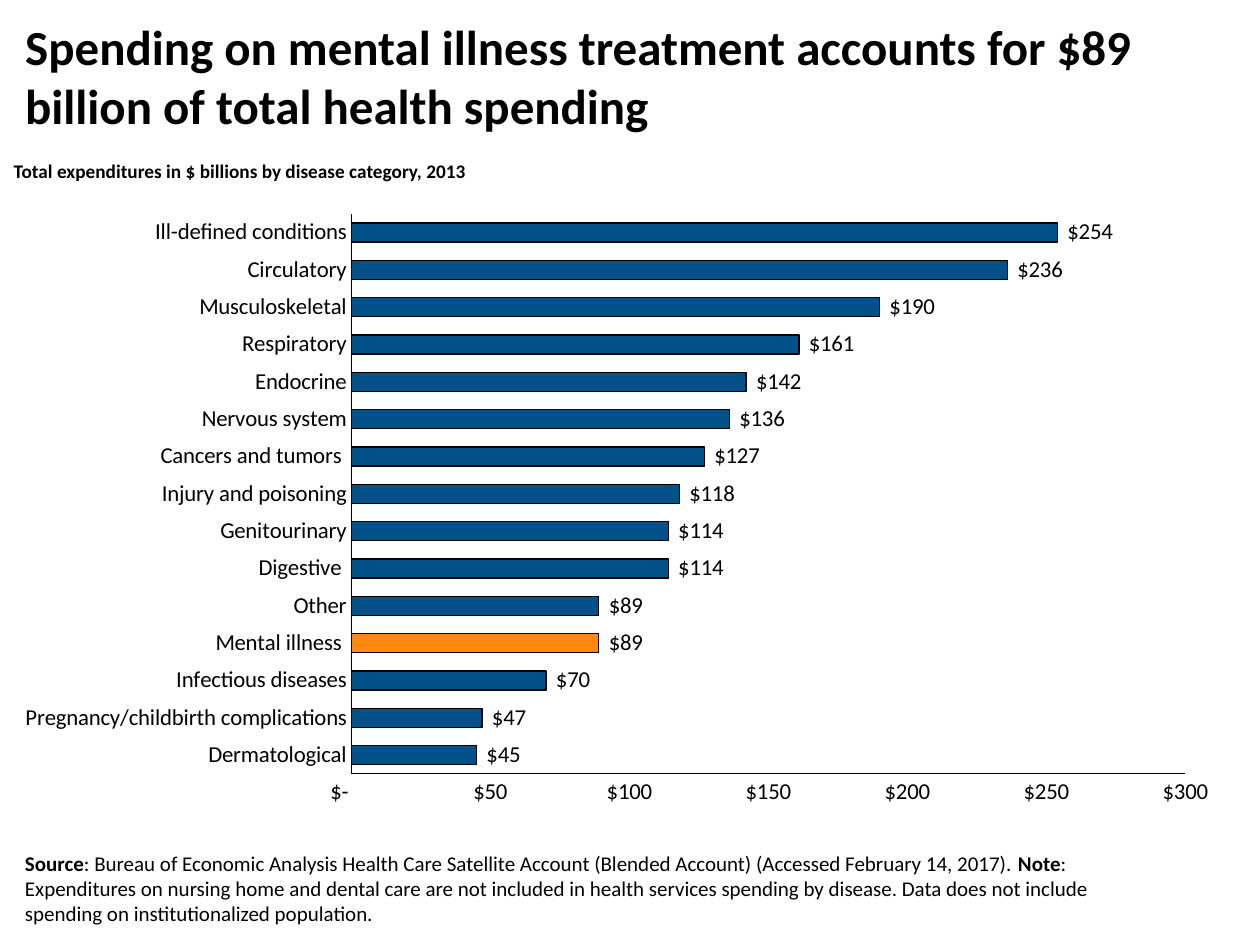
from lxml import etree
from pptx import Presentation
from pptx.chart.data import CategoryChartData
from pptx.dml.color import RGBColor
from pptx.enum.chart import XL_CHART_TYPE, XL_LABEL_POSITION, XL_TICK_MARK
from pptx.enum.text import MSO_ANCHOR, MSO_AUTO_SIZE, PP_ALIGN
from pptx.oxml.ns import qn
from pptx.util import Inches, Pt

BAR = XL_CHART_TYPE.BAR_CLUSTERED
OUTSIDE_END = XL_LABEL_POSITION.OUTSIDE_END
NO_TICK = XL_TICK_MARK.NONE
MIDDLE, BOTTOM = MSO_ANCHOR.MIDDLE, MSO_ANCHOR.BOTTOM
LEFT = PP_ALIGN.LEFT
FIT_SHAPE = MSO_AUTO_SIZE.SHAPE_TO_FIT_TEXT

FONT = "Calibri"
BLACK, BLUE, ORANGE = "000000", "025189", "FF8811"
DOLLARS = r'_("$"* #,##0_);_("$"* \(#,##0\);_("$"* "-"??_);_(@_)'
HIGHLIGHT = "Mental illness "
SPENDING = [
    ("Dermatological", 45),
    ("Pregnancy/childbirth complications", 47),
    ("Infectious diseases", 70),
    (HIGHLIGHT, 89),
    ("Other", 89),
    ("Digestive ", 114),
    ("Genitourinary", 114),
    ("Injury and poisoning", 118),
    ("Cancers and tumors ", 127),
    ("Nervous system", 136),
    ("Endocrine", 142),
    ("Respiratory", 161),
    ("Musculoskeletal", 190),
    ("Circulatory", 236),
    ("Ill-defined conditions", 254),
]


def rgb(color):
    return RGBColor.from_string(color)


def box(left, top, width, height):
    return [Inches(v) for v in (left, top, width, height)]


def set_font(font, size, bold=False):
    font.name, font.size, font.bold = FONT, Pt(size), bold
    font.color.rgb = rgb(BLACK)


def write(tf, runs, size, anchor, wrap=True):
    """Fill a text frame with one paragraph of (text, bold) runs."""
    tf.word_wrap = wrap
    tf.vertical_anchor = anchor
    p = tf.paragraphs[0]
    p.alignment = LEFT
    for text, bold in runs:
        r = p.add_run()
        r.text = text
        set_font(r.font, size, bold)


def add_title(slide, text):
    title = slide.shapes.title
    title.left, title.top, title.width, title.height = box(0.1, 0.1, 9.8, 1)
    write(title.text_frame, [(text, True)], 28, MIDDLE)


def add_text(slide, place, runs, size, anchor, wrap=True):
    tf = slide.shapes.add_textbox(*box(*place)).text_frame
    write(tf, runs, size, anchor, wrap)
    return tf


def set_outline(line):
    line.color.rgb = rgb(BLACK)
    line.width = Pt(0.75)


def set_plot_area(chart, **shares):
    """Fix the inner plot area as shares of the chart's size."""
    area = chart.plots[0]._element.getparent()
    for old in area.findall(qn("c:layout")):
        area.remove(old)
    layout = etree.Element(qn("c:layout"))
    area.insert(0, layout)
    manual = etree.SubElement(layout, qn("c:manualLayout"))
    settings = {"layoutTarget": "inner", "xMode": "edge", "yMode": "edge", **shares}
    for name, value in settings.items():
        etree.SubElement(manual, qn(f"c:{name}")).set("val", str(value))


def format_axis(axis):
    axis.has_major_gridlines = False
    axis.major_tick_mark = axis.minor_tick_mark = NO_TICK
    set_outline(axis.format.line)


def add_spending_chart(slide):
    names, values = zip(*SPENDING)
    data = CategoryChartData()
    data.categories = names
    data.add_series("Series 1", values)
    chart = slide.shapes.add_chart(BAR, *box(0.01, 1.6, 9.82, 4.9), data).chart
    chart.has_legend = chart.has_title = False
    set_font(chart.font, 13)
    set_plot_area(chart, x=0.283, y=0.02, w=0.674, h=0.907)

    format_axis(chart.category_axis)
    axis = chart.value_axis
    format_axis(axis)
    axis.minimum_scale, axis.maximum_scale, axis.major_unit = 0, 300, 50
    axis.tick_labels.number_format = DOLLARS
    axis.tick_labels.number_format_is_linked = False

    plot = chart.plots[0]
    plot.gap_width = 98
    plot.vary_by_categories = False
    series = plot.series[0]
    highlight = series.points[names.index(HIGHLIGHT)]
    for part, color in ((series, BLUE), (highlight, ORANGE)):
        part.format.fill.solid()
        part.format.fill.fore_color.rgb = rgb(color)
        set_outline(part.format.line)

    labels = series.data_labels
    labels.show_value = True
    labels.number_format = DOLLARS
    labels.number_format_is_linked = False
    labels.position = OUTSIDE_END
    set_font(labels.font, 13)


def main():
    prs = Presentation()
    prs.slide_width, prs.slide_height = Inches(10), Inches(7.5)
    s = prs.slides.add_slide(prs.slide_layouts[5])
    add_title(s, "Spending on mental illness treatment accounts for $89 "
                 "billion of total health spending")
    add_spending_chart(s)
    add_text(s, (0.1, 6.8, 9.1, 0.6), [
        ("Source", True),
        (": Bureau of Economic Analysis Health Care Satellite Account "
         "(Blended Account) (Accessed February 14, 2017). ", False),
        ("Note", True),
        (": Expenditures on nursing home and dental care are not included in "
         "health services spending by disease. Data does not include spending "
         "on institutionalized population.", False),
    ], 12, BOTTOM)
    subtitle = add_text(
        s, (0.01, 1.21, 3.85, 0.29),
        [("Total expenditures in $ billions by disease category, 2013", True)],
        11, MIDDLE, wrap=False)
    subtitle.auto_size = FIT_SHAPE
    prs.save("out.pptx")


if __name__ == "__main__":
    main()
